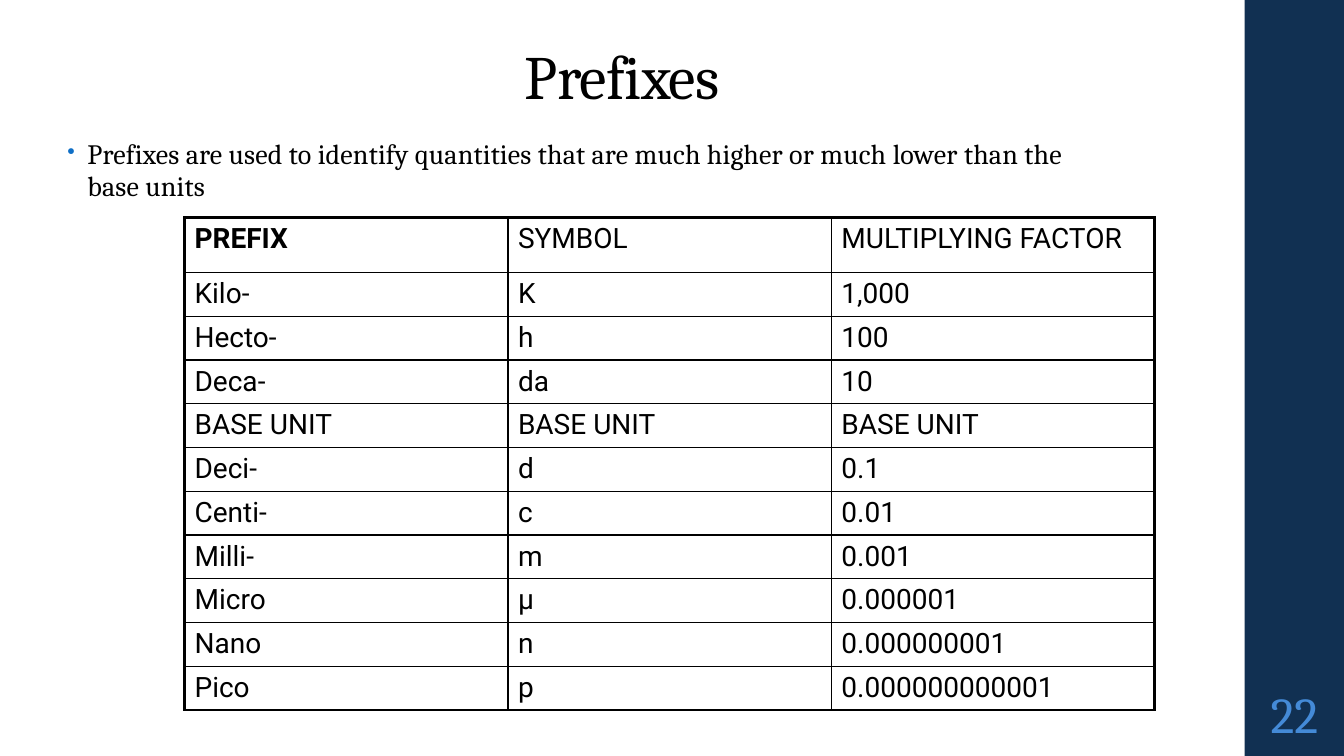
from lxml import etree
from pptx import Presentation
from pptx.dml.color import RGBColor
from pptx.enum.shapes import MSO_SHAPE
from pptx.enum.text import MSO_ANCHOR, PP_ALIGN
from pptx.oxml.ns import qn
from pptx.util import Pt

RECT = MSO_SHAPE.RECTANGLE
TOP, MIDDLE, BOTTOM = MSO_ANCHOR.TOP, MSO_ANCHOR.MIDDLE, MSO_ANCHOR.BOTTOM
LEFT, CENTER = PP_ALIGN.LEFT, PP_ALIGN.CENTER

COLORS = {"ink": "000000", "navy": "113052", "bullet": "0F6FC6", "number": "448AD7"}
SERIF, SANS = "Cambria", "Roboto"
THIN, THICK = 1, 2.25

PREFIXES = [
    ("PREFIX", "SYMBOL", "MULTIPLYING FACTOR"),
    ("Kilo-", "K", "1,000"),
    ("Hecto-", "h", "100"),
    ("Deca-", "da", "10"),
    ("BASE UNIT", "BASE UNIT", "BASE UNIT"),
    ("Deci-", "d", "0.1"),
    ("Centi-", "c", "0.01"),
    ("Milli-", "m", "0.001"),
    ("Micro", "µ", "0.000001"),
    ("Nano", "n", "0.000000001"),
    ("Pico", "p", "0.000000000001"),
]


def rgb(name):
    return RGBColor.from_string(COLORS[name])


def set_all(target, values):
    for name, value in values.items():
        setattr(target, name, value)


class SlideBuilder:
    def __init__(self, slide):
        self.s = slide

    def run(self, p, text, size, font=SERIF, color="ink", bold=False, spacing=0):
        r = p.add_run()
        r.text = text
        set_all(r.font, {"size": Pt(size), "name": font, "bold": bold})
        r.font.color.rgb = rgb(color)
        if spacing:
            r.font._element.set("spc", str(round(spacing * 100)))

    def rect(self, box, fill):
        sp = self.s.shapes.add_shape(RECT, *map(Pt, box))
        sp.shadow.inherit = False
        sp.fill.solid()
        sp.fill.fore_color.rgb = rgb(fill)
        sp.line.fill.background()

    def text(self, box, text, size, anchor=TOP, para=None, inset=7.2, **style):
        tf = self.s.shapes.add_textbox(*map(Pt, box)).text_frame
        set_all(tf, {"word_wrap": True, "vertical_anchor": anchor,
                     "margin_left": Pt(inset), "margin_right": Pt(inset)})
        p = tf.paragraphs[0]
        set_all(p, para or {})
        self.run(p, text, size, **style)
        return p

    def bullet(self, p, indent, char, color, percent):
        pPr = p._p.get_or_add_pPr()
        pPr.set("marL", str(Pt(indent)))
        pPr.set("indent", str(-Pt(indent)))
        clr = etree.SubElement(pPr, qn("a:buClr"))
        etree.SubElement(clr, qn("a:srgbClr"), val=COLORS[color])
        etree.SubElement(pPr, qn("a:buSzPct"), val=str(percent * 1000))
        etree.SubElement(pPr, qn("a:buChar"), char=char)

    def borders(self, cell, widths):
        tcPr = cell._tc.get_or_add_tcPr()
        for i, (side, width) in enumerate(widths.items()):
            ln = etree.Element(qn("a:ln" + side), w=str(Pt(width)))
            fill = etree.SubElement(ln, qn("a:solidFill"))
            etree.SubElement(fill, qn("a:srgbClr"), val=COLORS["ink"])
            tcPr.insert(i, ln)

    def table(self, box, rows, header_height, row_height):
        n_rows, n_cols = len(rows), len(rows[0])
        table = self.s.shapes.add_table(n_rows, n_cols, *map(Pt, box)).table
        set_all(table, {"first_row": False, "horz_banding": False})
        for col in table.columns:
            col.width = Pt(box[2] / n_cols)
        for i, values in enumerate(rows):
            table.rows[i].height = Pt(row_height if i else header_height)
            for j, value in enumerate(values):
                cell = table.cell(i, j)
                cell.fill.background()
                self.run(cell.text_frame.paragraphs[0], value, 20, SANS,
                         bold=i == j == 0)
                # Thick outer frame, thin inner grid
                outer = {"L": j == 0, "R": j == n_cols - 1,
                         "T": i == 0, "B": i == n_rows - 1}
                self.borders(cell, {side: THICK if edge else THIN
                                    for side, edge in outer.items()})


def main():
    prs = Presentation()
    set_all(prs, {"slide_width": Pt(960), "slide_height": Pt(540)})
    b = SlideBuilder(prs.slides.add_slide(prs.slide_layouts[6]))

    # Sidebar
    b.rect((889, 0, 71, 540), "navy")

    # Title and statement
    b.text((0, 28.8, 889, 55.4), "Prefixes", 44, BOTTOM,
           {"alignment": CENTER, "line_spacing": 0.9}, spacing=-0.5)
    p = b.text((41, 95.8, 735, 391),
               "Prefixes are used to identify quantities that are much higher "
               "or much lower than the base units", 20,
               para={"alignment": LEFT, "line_spacing": 0.95,
                     "space_before": Pt(14), "space_after": Pt(2)}, spacing=0.1)
    b.bullet(p, 14.4, "•", "bullet", 80)

    # Slide number
    b.text((889, 486, 71, 46.8), "22", 36, MIDDLE, {"alignment": CENTER},
           inset=3.6, color="number")

    # Prefix table
    b.table((131.8, 155.5, 693, 346.2), PREFIXES, 39.2, 30.7)

    prs.save("out.pptx")


if __name__ == "__main__":
    main()
